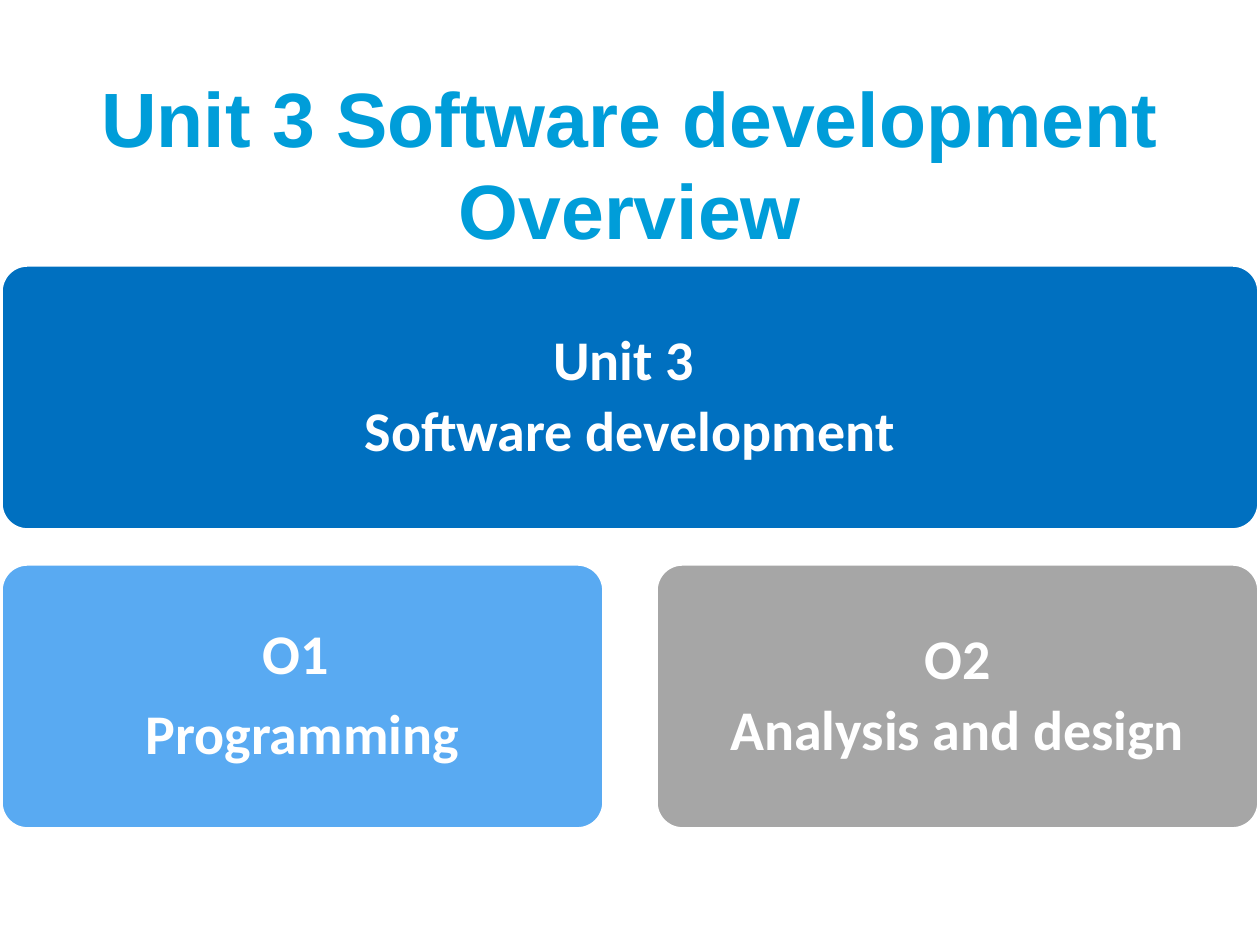
from pptx import Presentation
from pptx import util as u
from pptx.dml.color import RGBColor
from pptx.enum import shapes, text

PX = u.Inches(1) // 126
TITLE_BLUE = RGBColor(0x00, 0x9D, 0xD9)
UNIT_BLUE = RGBColor(0x00, 0x70, 0xC0)
PROGRAMMING_BLUE = RGBColor(0x59, 0xAA, 0xF2)
DESIGN_GREY = RGBColor(0xA6, 0xA6, 0xA6)
WHITE = RGBColor(0xFF, 0xFF, 0xFF)


def scaled(*lengths):
    """Turn px lengths into EMU."""
    return [length * PX for length in lengths]


def add_run(paragraph, words, font, size, color):
    """Add one bold run to a paragraph."""
    run = paragraph.add_run()
    run.text = words
    run.font.name = font
    run.font.size = u.Pt(size)
    run.font.bold = True
    run.font.color.rgb = color


def place_title(slide, box, lines):
    """Place the title in its box, one line below the other."""
    title = slide.shapes.title
    title.left, title.top, title.width, title.height = scaled(*box)
    frame = title.text_frame
    frame.auto_size = text.MSO_AUTO_SIZE.NONE
    frame.vertical_anchor = text.MSO_ANCHOR.MIDDLE
    paragraph = frame.paragraphs[0]
    paragraph.alignment = text.PP_ALIGN.CENTER
    for index, line in enumerate(lines):
        if index:
            paragraph.add_line_break()
        add_run(paragraph, line, "Arial", 44, TITLE_BLUE)


def add_card(slide, box, fill, lines, space_after):
    """Add a rounded card with centred lines of text."""
    card = slide.shapes.add_shape(shapes.MSO_SHAPE.ROUNDED_RECTANGLE, *scaled(*box))
    card.adjustments[0] = 0.1
    card.shadow.inherit = False
    card.fill.solid()
    card.fill.fore_color.rgb = fill
    card.line.color.rgb = WHITE
    card.line.width = u.Pt(2)
    frame = card.text_frame
    frame.word_wrap = True
    frame.vertical_anchor = text.MSO_ANCHOR.MIDDLE
    frame.margin_left = frame.margin_right = 16 * PX
    frame.margin_top = frame.margin_bottom = 16 * PX
    for index, line in enumerate(lines):
        paragraph = frame.add_paragraph() if index else frame.paragraphs[0]
        paragraph.alignment = text.PP_ALIGN.CENTER
        paragraph.line_spacing = 0.9
        paragraph.space_after = u.Pt(space_after)
        add_run(paragraph, line, "Calibri", 32, WHITE)


def add_unit_overview(slide, box):
    """Add the unit card with its two outcome cards in equal columns below."""
    left, top, width, height = box
    column_gap, row_gap = 52, 34
    card_height = (height - row_gap) // 2
    column_width = (width - column_gap) // 2
    add_card(slide, (left, top, width, card_height), UNIT_BLUE,
             ["Unit 3 ", "Software development"], 6)
    outcomes = [
        (PROGRAMMING_BLUE, ["O1 ", "Programming"], 11.2),
        (DESIGN_GREY, ["O2", "Analysis and design"], 6),
    ]
    for column, (fill, lines, space_after) in enumerate(outcomes):
        outcome_box = (left + column * (column_width + column_gap),
                       top + card_height + row_gap, column_width, card_height)
        add_card(slide, outcome_box, fill, lines, space_after)


def main():
    """Build and save the overview slide."""
    deck = Presentation()
    deck.slide_width, deck.slide_height = scaled(1260, 945)
    slide = deck.slides.add_slide(deck.slide_layouts[5])
    place_title(slide, (0, 84, 1260, 158), ["Unit 3 Software development", "Overview"])
    add_unit_overview(slide, (1, 265, 1258, 564))
    deck.save("out.pptx")


if __name__ == "__main__":
    main()
